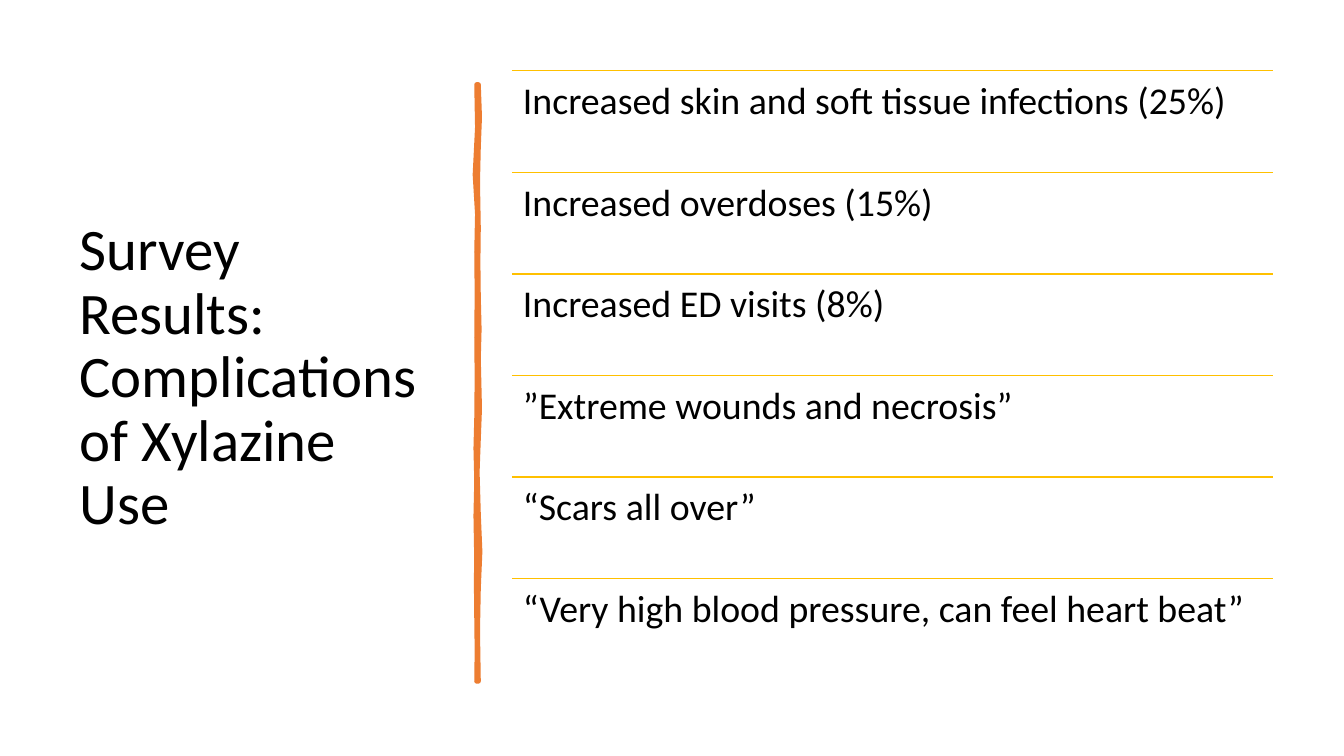
from lxml.etree import SubElement
from pptx import Presentation
from pptx.dml.color import RGBColor
from pptx.enum.shapes import MSO_CONNECTOR
from pptx.enum.text import MSO_ANCHOR, MSO_AUTO_SIZE, PP_ALIGN
from pptx.oxml.ns import qn
from pptx.util import Cm, Pt

COLORS = {"text": "000000", "brush": "ED7D31", "rule": "FFC000"}
COMPLICATIONS = [
    "Increased skin and soft tissue infections (25%)",
    "Increased overdoses (15%)",
    "Increased ED visits (8%)",
    "”Extreme wounds and necrosis”",
    "“Scars all over”",
    "“Very high blood pressure, can feel heart beat”",
]
LIST_LEFT, LIST_TOP, LIST_WIDTH, ROW_HEIGHT = 12.9, 1.78, 19.18, 2.56

# Outline of the brush stroke in cm: down the right edge, up the left edge
BRUSH_RIGHT = [
    (12.06, 2.13), (12.09, 2.95), (12.06, 3.71), (12.04, 4.6), (12.06, 5.74),
    (12.05, 6.6), (12.06, 7.47), (12.08, 8.3), (12.06, 9.04), (12.09, 10.3),
    (12.06, 11.07), (12.03, 11.9), (12.06, 12.95), (12.1, 13.9),
    (12.06, 14.83), (12.04, 15.9), (12.06, 17.17),
]
BRUSH_LEFT = [
    (12.01, 17.17), (12.02, 16.4), (12.01, 15.57), (12, 14.6), (12.01, 14.15),
    (11.99, 13), (12.01, 12.12), (11.99, 11.3), (12.01, 10.54), (12.02, 9.5),
    (12.01, 8.51), (12.02, 7.4), (12.01, 6.35), (12.03, 5.4), (11.97, 4.4),
    (12.03, 3.2), (12.01, 2.13),
]


def write(frame, words, size):
    frame.word_wrap = True
    frame.auto_size = MSO_AUTO_SIZE.NONE
    paragraph = frame.paragraphs[0]
    paragraph.alignment = PP_ALIGN.LEFT
    paragraph.line_spacing = 0.9
    run = paragraph.add_run()
    run.text = words
    run.font.name = "Calibri"
    run.font.size = Pt(size)
    run.font.color.rgb = RGBColor.from_string(COLORS["text"])


deck = Presentation()
deck.slide_width, deck.slide_height = Cm(33.87), Cm(19.05)
slide = deck.slides.add_slide(deck.slide_layouts[5])

heading = slide.shapes.title
heading.left, heading.top = Cm(1.75), Cm(1.78)
heading.width, heading.height = Cm(9.5), Cm(15.52)
heading.text_frame.vertical_anchor = MSO_ANCHOR.MIDDLE
write(heading.text_frame, "Survey Results: Complications of Xylazine Use", 42)

outline = [(Cm(x), Cm(y)) for x, y in BRUSH_RIGHT + BRUSH_LEFT]
builder = slide.shapes.build_freeform(*outline[0])
builder.add_line_segments(outline[1:], close=True)
brush = builder.convert_to_shape()
brush.shadow.inherit = False
brush.fill.solid()
brush.fill.fore_color.rgb = RGBColor.from_string(COLORS["brush"])
brush.line.color.rgb = RGBColor.from_string(COLORS["brush"])
brush.line.width = Pt(3.25)
SubElement(brush.line._get_or_add_ln(), qn("a:round"))

complication_list = slide.shapes.add_group_shape().shapes
for row, complication in enumerate(COMPLICATIONS):
    top = Cm(LIST_TOP + row * ROW_HEIGHT)
    rule = complication_list.add_connector(
        MSO_CONNECTOR.STRAIGHT, Cm(LIST_LEFT), top, Cm(LIST_LEFT + LIST_WIDTH), top)
    rule.line.color.rgb = RGBColor.from_string(COLORS["rule"])
    rule.line.width = Pt(1)
    SubElement(rule._element.spPr, qn("a:effectLst"))

    entry = complication_list.add_textbox(
        Cm(LIST_LEFT), top, Cm(LIST_WIDTH), Cm(ROW_HEIGHT)).text_frame
    for side in ("left", "top", "right", "bottom"):
        setattr(entry, f"margin_{side}", Cm(0.28))
    write(entry, complication, 27)

deck.save("out.pptx")
